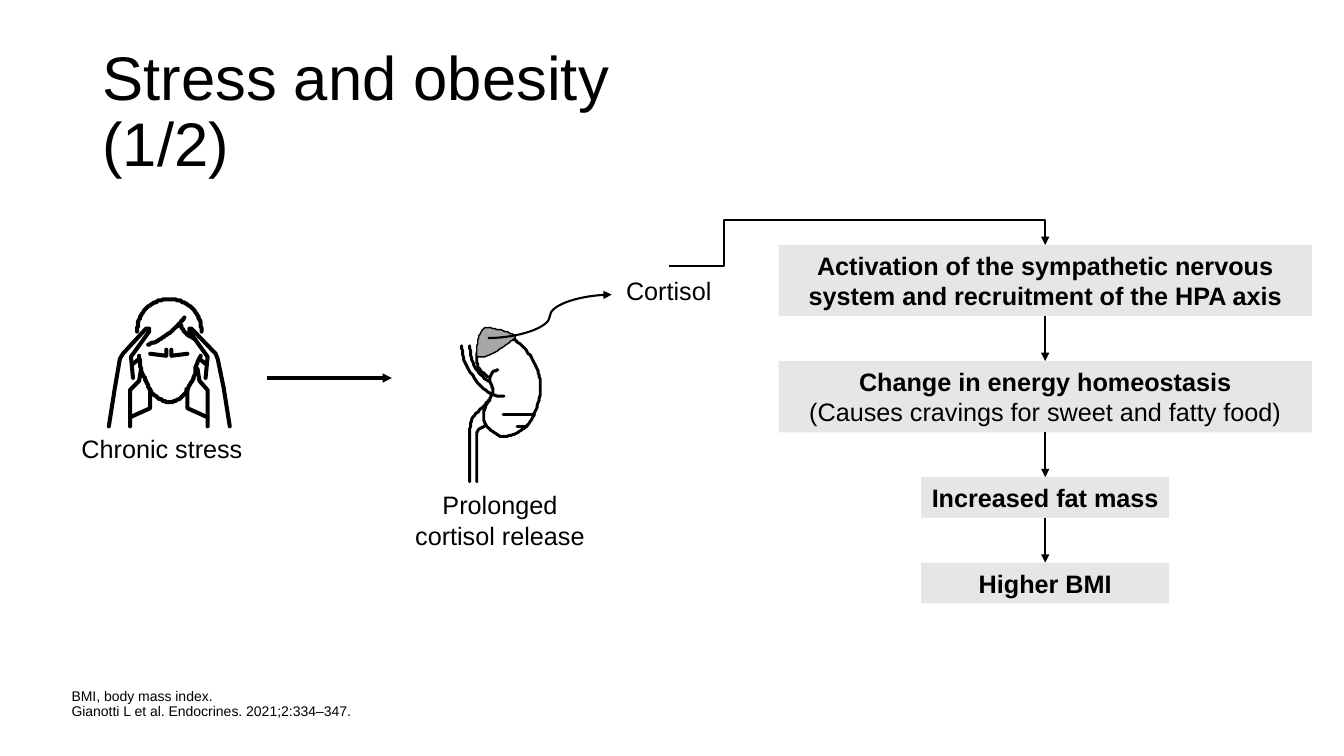
from dataclasses import dataclass

from lxml.etree import SubElement
from pptx import Presentation
from pptx.dml.color import RGBColor
from pptx.enum.shapes import MSO_CONNECTOR, MSO_SHAPE
from pptx.enum.text import MSO_ANCHOR, PP_ALIGN
from pptx.oxml.ns import qn
from pptx.util import Pt

COLORS = {"ink": "000000", "box": "E7E6E6", "gland": "A6A6A6"}
FONT = "Arial"
ICON_GRID = Pt(0.72)
FACE_MIRROR = 335.5
STEPS = 8
CENTER_X = 746.6
FLOW_TOP, FLOW_GAP = 175, 32
ONE_LINE, TWO_LINES = 29.1, 50.9

Points = list[tuple[float, float]]


@dataclass
class Label:
    text: str
    left: float
    top: float
    width: float
    height: float
    align: PP_ALIGN = PP_ALIGN.CENTER


@dataclass
class FlowBox:
    heading: str
    width: float
    height: float
    detail: str = ""


@dataclass
class Arrow:
    start: tuple[float, float]
    end: tuple[float, float]
    weight: float = 1.5
    kind: MSO_CONNECTOR = MSO_CONNECTOR.STRAIGHT


@dataclass
class Stroke:
    points: Points
    curved: bool = True
    mirrored: bool = False


KIDNEY = [
    Stroke([(484, 374), (475, 365), (473, 355), (475, 346), (484, 335), (495, 332),
            (508, 336), (518, 343), (528, 356), (535, 372), (536, 390), (531, 408),
            (524, 421), (512, 430), (498, 433), (486, 426), (480, 416), (481, 405),
            (487, 394), (489, 386), (486, 378), (488, 370), (494, 367)]),
    Stroke([(458, 343), (461, 359), (470, 374), (479, 385), (490, 392), (500, 393)]),
    Stroke([(466, 343), (469, 359), (476, 371), (486, 379)]),
    Stroke([(466, 478), (466, 450), (466, 427), (470, 413), (480, 403), (485, 397)]),
    Stroke([(473, 478), (473, 455), (473, 433), (475, 426), (482, 422)]),
    Stroke([(499, 411), (530, 411)], False),
    Stroke([(513, 423), (523, 423)], False),
]
GLAND = [(505, 340), (490, 350), (474, 354), (474, 339), (480, 326),
         (495, 327), (509, 332), (511, 335), (505, 340)]
HEAD = [
    Stroke([(136, 329), (138, 317), (145, 306), (156, 299), (168, 297),
            (180, 299), (191, 306), (198, 317), (200, 329)]),
    Stroke([(138, 353), (140, 367), (144, 376), (147, 383), (150, 389)]),
    Stroke([(199, 353), (194, 365), (194, 370), (190, 379), (185, 387)]),
    Stroke([(149, 387), (157, 395), (168, 399), (179, 395), (186, 387)]),
    Stroke([(147, 342), (160, 336), (171, 328), (178, 321), (183, 315)]),
    Stroke([(179, 322), (184, 330), (193, 336)]),
    Stroke([(108, 423), (114, 385), (119, 356), (122, 351), (145, 326),
            (148, 326), (148, 329), (130, 354), (132, 375)], False, True),
    Stroke([(129, 423), (129, 387), (138, 378), (140, 366)], False, True),
    Stroke([(132, 361), (138, 356)], False, True),
    Stroke([(129, 414), (149, 405), (149, 387)], False, True),
    Stroke([(149, 351), (165, 353), (165, 347)], False, True),
]
LABELS = [
    Label("Chronic stress", 51.1, 306, 139.7, ONE_LINE, PP_ALIGN.LEFT),
    Label("Prolonged cortisol release", 288.7, 346.3, 136.8, TWO_LINES),
    Label("Cortisol", 426.2, 193, 103, ONE_LINE),
]
FLOW = [
    FlowBox("Activation of the sympathetic nervous system and recruitment of the HPA axis",
            380.9, TWO_LINES),
    FlowBox("Change in energy homeostasis", 380.9, TWO_LINES,
            "(Causes cravings for sweet and fatty food)"),
    FlowBox("Increased fat mass", 177.1, ONE_LINE),
    FlowBox("Higher BMI", 177.1, ONE_LINE),
]


def apply(target: object, values: dict) -> None:
    for name, value in values.items():
        setattr(target, name, value)


def rgb(name: str) -> RGBColor:
    return RGBColor.from_string(COLORS[name])


def write(p, text: str, size: float, align: PP_ALIGN, bold: bool = False,
          spacing: float = 1.0) -> None:
    p.text = text
    apply(p, {"alignment": align, "line_spacing": spacing})
    for r in p.runs:
        apply(r.font, {"name": FONT, "size": Pt(size), "bold": bold})
        r.font.color.rgb = rgb("ink")


def add_label(s, label: Label):
    sp = s.shapes.add_textbox(Pt(label.left), Pt(label.top), Pt(label.width), Pt(label.height))
    tf = sp.text_frame
    tf.word_wrap = True
    write(tf.paragraphs[0], label.text, 18, label.align)


def add_flow_box(s, box: FlowBox, top: float) -> None:
    sp = s.shapes.add_shape(MSO_SHAPE.RECTANGLE, Pt(CENTER_X - box.width / 2), Pt(top),
                            Pt(box.width), Pt(box.height))
    sp.shadow.inherit = False
    sp.fill.solid()
    sp.fill.fore_color.rgb = rgb("box")
    sp.line.fill.background()
    tf = sp.text_frame
    tf.word_wrap = True
    write(tf.paragraphs[0], box.heading, 18, PP_ALIGN.CENTER, True)
    if box.detail:
        write(tf.add_paragraph(), box.detail, 18, PP_ALIGN.CENTER)


def set_line(sp, weight: float):
    sp.line.width = Pt(weight)
    sp.line.color.rgb = rgb("ink")
    return sp.element.spPr.find(qn("a:ln"))


def add_arrow(s, arrow: Arrow):
    sp = s.shapes.add_connector(arrow.kind, *map(Pt, arrow.start + arrow.end))
    ln = set_line(sp, arrow.weight)
    SubElement(ln, qn("a:tailEnd"), type="triangle")
    SubElement(sp.element.spPr, qn("a:effectLst"))
    return sp


def bend_over(sp, **adjustments: str) -> None:
    geom = sp.element.spPr.find(qn("a:prstGeom"))
    geom.set("prst", "bentConnector4")
    guides = geom.find(qn("a:avLst"))
    for name, value in adjustments.items():
        SubElement(guides, qn("a:gd"), name=name, fmla=f"val {value}")


def smooth_curve(points: Points) -> Points:
    padded = [points[0], *points, points[-1]]
    curve = [points[0]]
    for a, b, c, d in zip(padded, padded[1:], padded[2:], padded[3:]):
        for step in range(1, STEPS + 1):
            t = step / STEPS
            curve.append(tuple(
                b[i] + t * (c[i] - a[i]) / 2
                + t**2 * (2 * a[i] - 5 * b[i] + 4 * c[i] - d[i]) / 2
                + t**3 * (3 * b[i] - a[i] - 3 * c[i] + d[i]) / 2 for i in (0, 1)))
    return curve


def add_outline(s, points: Points, weight: float, fill: str = "") -> None:
    builder = s.shapes.build_freeform(*points[0], scale=ICON_GRID)
    builder.add_line_segments(points[1:], close=bool(fill))
    sp = builder.convert_to_shape()
    sp.shadow.inherit = False
    if fill:
        sp.fill.solid()
        sp.fill.fore_color.rgb = rgb(fill)
    else:
        sp.fill.background()
    ln = set_line(sp, weight)
    ln.set("cap", "rnd")
    SubElement(ln, qn("a:round"))


def add_icon(s, strokes: list[Stroke], weight: float) -> None:
    for stroke in strokes:
        points = smooth_curve(stroke.points) if stroke.curved else stroke.points
        add_outline(s, points, weight)
        if stroke.mirrored:
            add_outline(s, [(FACE_MIRROR - x, y) for x, y in points], weight)


def main() -> None:
    prs = Presentation()
    apply(prs, {"slide_width": Pt(960), "slide_height": Pt(540)})
    s = prs.slides.add_slide(prs.slide_layouts[5])
    add_icon(s, KIDNEY, 2.1)
    add_outline(s, smooth_curve(GLAND), 1, "gland")

    title = s.shapes.title
    apply(title, {"left": Pt(66), "top": Pt(28.75), "width": Pt(828), "height": Pt(104.4)})
    apply(title.text_frame, {"vertical_anchor": MSO_ANCHOR.MIDDLE, "word_wrap": True})
    write(title.text_frame.paragraphs[0], "Stress and obesity\n(1/2)", 44, PP_ALIGN.LEFT,
          spacing=0.9)

    tf = s.shapes.add_textbox(Pt(51.1), Pt(488.9), Pt(681), Pt(25.2)).text_frame
    apply(tf, {"margin_left": 0, "margin_right": 0, "margin_top": 0, "margin_bottom": 0,
               "vertical_anchor": MSO_ANCHOR.BOTTOM, "word_wrap": True})
    write(tf.paragraphs[0],
          "BMI, body mass index.\nGianotti L et al. Endocrines. 2021;2:334–347.",
          10, PP_ALIGN.LEFT, spacing=0.9)

    for label in LABELS:
        add_label(s, label)
    add_arrow(s, Arrow((348.5, 241.5), (437, 210.5), kind=MSO_CONNECTOR.CURVE))
    add_arrow(s, Arrow((190.8, 270), (280, 270), 2.25))
    cortisol_effect = Arrow((477.7, 190.1), (CENTER_X, FLOW_TOP), kind=MSO_CONNECTOR.ELBOW)
    bend_over(add_arrow(s, cortisol_effect), adj1="14600", adj2="217200")

    top = FLOW_TOP
    for i, box in enumerate(FLOW):
        if i:
            add_arrow(s, Arrow((CENTER_X, top - FLOW_GAP), (CENTER_X, top)))
        add_flow_box(s, box, top)
        top += box.height + FLOW_GAP
    add_icon(s, HEAD, 2.9)
    prs.save("out.pptx")


if __name__ == "__main__":
    main()
